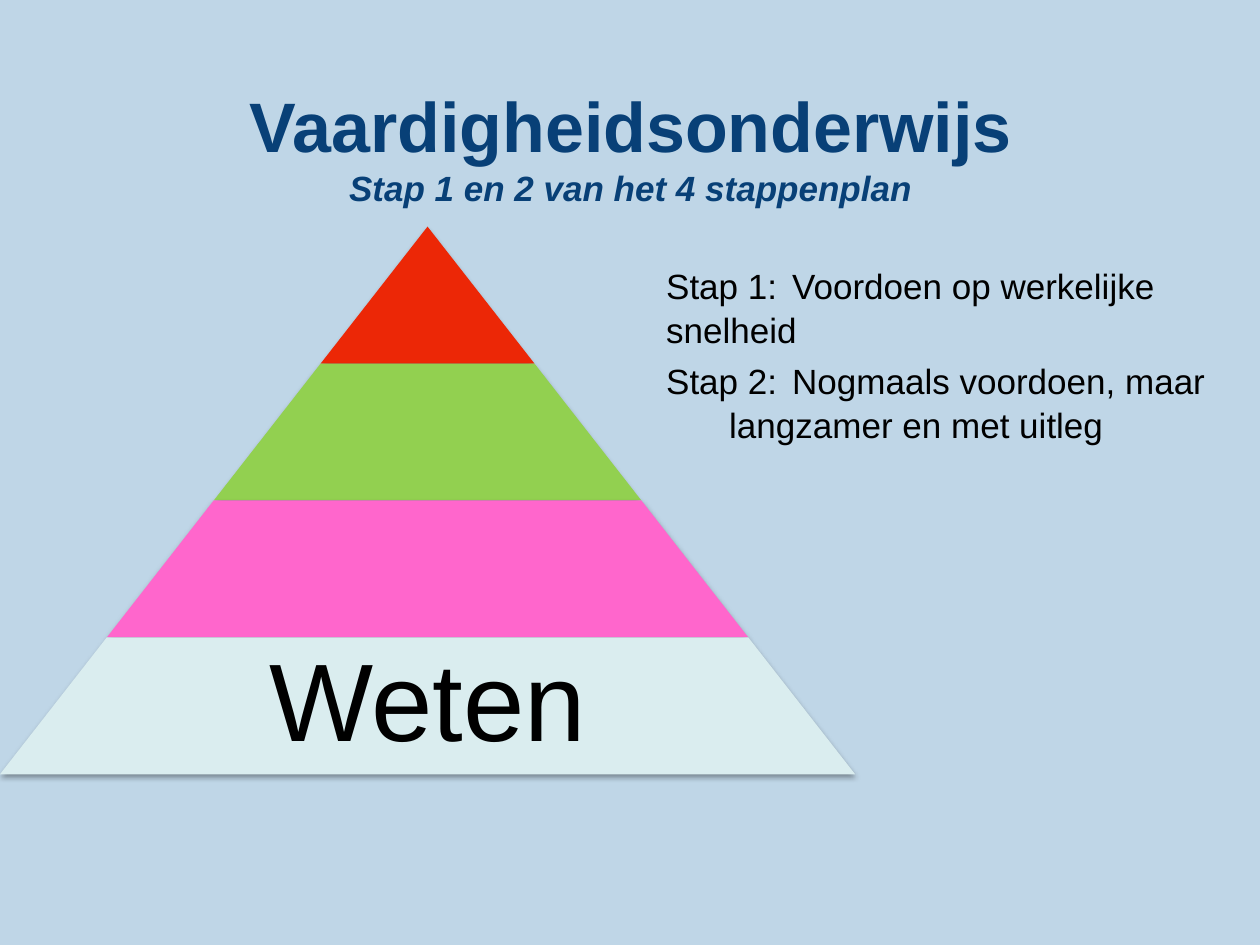
from lxml.etree import SubElement
from pptx import Presentation
from pptx.dml.color import RGBColor
from pptx.enum.shapes import MSO_SHAPE
from pptx.enum.text import MSO_ANCHOR, PP_ALIGN
from pptx.oxml.ns import qn
from pptx.util import Cm, Pt


def rgb(color):
    return RGBColor.from_string(color)


def add_text(shapes, box, paragraphs, color, anchor, align, inset=0.25):
    tf = shapes.add_textbox(*[Cm(v) for v in box]).text_frame
    tf.word_wrap = True
    tf.vertical_anchor = anchor
    tf.margin_left = tf.margin_right = Cm(inset)
    tf.margin_top = tf.margin_bottom = Cm(0.13)
    for i, (text, size, bold, italic) in enumerate(paragraphs):
        p = tf.paragraphs[0] if i == 0 else tf.add_paragraph()
        p.add_run().text = text
        p.alignment = align
        p.font.name = "Arial"
        p.font.size = Pt(size)
        p.font.bold = bold
        p.font.italic = italic
        p.font.color.rgb = rgb(color)
    return tf


prs = Presentation()
prs.slide_width = Cm(25.4)
prs.slide_height = Cm(19.05)
s = prs.slides.add_slide(prs.slide_layouts[6])
s.background.fill.solid()
s.background.fill.fore_color.rgb = rgb("BFD6E7")

pyramid = s.shapes.add_group_shape().shapes
top, step, half = 4.57, 2.76, 2.155
for i, color in enumerate(["EC2706", "92D050", "FF66CC", "DAEDEF"]):
    sp = pyramid.add_shape(MSO_SHAPE.TRAPEZOID, Cm((3 - i) * half), Cm(top + i * step),
                           Cm(2 * half * (i + 1)), Cm(step))
    sp.adjustments[0] = half / step
    sp.fill.solid()
    sp.fill.fore_color.rgb = rgb(color)
    sp.line.fill.background()
    effects = SubElement(sp._element.spPr, qn("a:effectLst"))
    shadow = SubElement(effects, qn("a:outerShdw"), blurRad=str(Pt(3.1)), dist=str(Pt(1.8)),
                        dir="5400000", rotWithShape="0")
    black = SubElement(shadow, qn("a:srgbClr"), val="000000")
    SubElement(black, qn("a:alpha"), val="35000")

tf = add_text(pyramid, (3.02, top + 3 * step, 11.2, step), [("Weten", 63, False, False)],
              "000000", MSO_ANCHOR.MIDDLE, PP_ALIGN.CENTER)
tf.paragraphs[0].line_spacing = 0.9

steps = ["Stap 1:\tVoordoen op werkelijke \tsnelheid",
         "Stap 2:\tNogmaals voordoen, maar \tlangzamer en met uitleg"]
tf = add_text(s.shapes, (13.18, 5.16, 11.38, 4.06), [(t, 20, False, False) for t in steps],
              "000000", MSO_ANCHOR.TOP, PP_ALIGN.LEFT)
for p in tf.paragraphs:
    p.line_spacing = 1.05
tf.paragraphs[1].space_before = Pt(4)

add_text(s.shapes, (1.96, 1.52, 21.51, 2.82),
         [("Vaardigheidsonderwijs", 40, True, False),
          ("Stap 1 en 2 van het 4 stappenplan", 20, True, True)],
         "084077", MSO_ANCHOR.BOTTOM, PP_ALIGN.CENTER)

prs.save("out.pptx")
